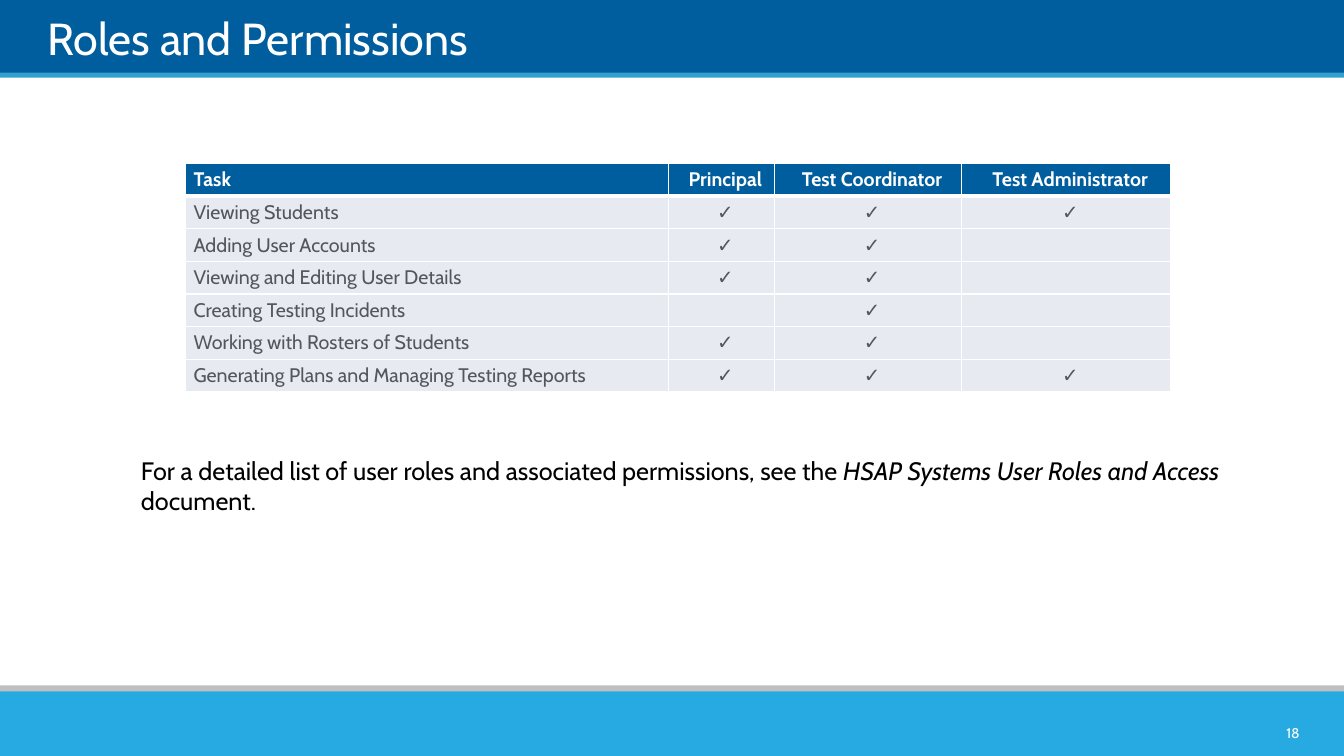
from pptx import Presentation
from pptx.dml.color import RGBColor
from pptx.enum.shapes import MSO_SHAPE
from pptx.enum.text import MSO_ANCHOR, PP_ALIGN
from pptx.oxml import parse_xml
from pptx.oxml.ns import nsdecls
from pptx.util import Inches, Pt

RECTANGLE = MSO_SHAPE.RECTANGLE
MIDDLE, BOTTOM = MSO_ANCHOR.MIDDLE, MSO_ANCHOR.BOTTOM
LEFT, CENTER, RIGHT = PP_ALIGN.LEFT, PP_ALIGN.CENTER, PP_ALIGN.RIGHT

FONT = "Cabin"
COLORS = {
    "navy": "005E9E", "blue": "35A0CE", "gray": "BFBFBF", "sky": "27AAE1",
    "cell": "E7EAF0", "task": "53565A", "white": "FFFFFF", "black": "000000",
}
TITLE = "Roles and Permissions"
PAGE_NUMBER = "18"
ROLES = ["Principal", "Test Coordinator", "Test Administrator"]
PERMISSIONS = [
    ("Viewing Students", ROLES),
    ("Adding User Accounts", ROLES[:2]),
    ("Viewing and Editing User Details", ROLES[:2]),
    ("Creating Testing Incidents", ROLES[1:2]),
    ("Working with Rosters of Students", ROLES[:2]),
    ("Generating Plans and Managing Testing Reports", ROLES),
]
NOTE = [
    ("For a detailed list of user roles and associated permissions, see the ", False),
    ("HSAP Systems User Roles and Access", True),
    (" document.", False),
]
BANDS = [
    (-0.01, 0.75, "navy"),
    (0.72, 0.05, "blue"),
    (6.8, 0.14, "gray"),
    (6.86, 0.64, "sky"),
]
COLUMN_WIDTHS = [4.79, 1.05, 1.86, 2.07]
TABLE_LEFT, TABLE_TOP, TABLE_HEIGHT = 1.84, 1.62, 2.27


def rgb(name):
    return RGBColor.from_string(COLORS[name])


def style(font, size, color, bold=False, italic=False):
    font.name = FONT
    font.size = Pt(size)
    font.bold = bold
    font.italic = italic
    font.color.rgb = rgb(color)


def add_border(cell, side, points):
    cell._tc.get_or_add_tcPr().append(parse_xml(
        f'<a:ln{side} {nsdecls("a")} w="{Pt(points)}"><a:solidFill>'
        f'<a:srgbClr val="{COLORS["white"]}"/></a:solidFill></a:ln{side}>'))


def add_bands(slide, width):
    for top, height, color in BANDS:
        band = slide.shapes.add_shape(RECTANGLE, 0, Inches(top), width, Inches(height))
        band.shadow.inherit = False
        band.fill.solid()
        band.fill.fore_color.rgb = rgb(color)
        band.line.fill.background()


def add_title(slide):
    title = slide.shapes.title
    title.element.getparent().append(title.element)
    title.left, title.top = Inches(0.47), Inches(0.07)
    title.width, title.height = Inches(12.05), Inches(0.57)
    frame = title.text_frame
    frame.text = TITLE
    frame.vertical_anchor = BOTTOM
    frame.margin_left = frame.margin_right = frame.margin_top = frame.margin_bottom = 0
    frame.paragraphs[0].alignment = LEFT
    style(frame.paragraphs[0].runs[0].font, 32, "white")


def add_page_number(slide):
    number = slide.shapes.add_textbox(Inches(12.36), Inches(7.12), Inches(0.63), Inches(0.31))
    frame = number.text_frame
    frame.word_wrap = True
    frame.vertical_anchor = MIDDLE
    frame.text = PAGE_NUMBER
    frame.paragraphs[0].alignment = RIGHT
    style(frame.paragraphs[0].runs[0].font, 10, "white")


def add_permissions(slide):
    rows = [["Task", *ROLES]]
    for task, allowed in PERMISSIONS:
        rows.append([task, *("✓" if role in allowed else "" for role in ROLES)])
    table = slide.shapes.add_table(
        len(rows), len(COLUMN_WIDTHS), Inches(TABLE_LEFT), Inches(TABLE_TOP),
        Inches(sum(COLUMN_WIDTHS)), Inches(TABLE_HEIGHT)).table
    for column, width in zip(table.columns, COLUMN_WIDTHS):
        column.width = Inches(width)
    for r, row in enumerate(rows):
        header = r == 0
        table.rows[r].height = Inches(TABLE_HEIGHT / len(rows))
        for c, text in enumerate(row):
            cell = table.cell(r, c)
            for side in "LRTB":
                heavy = (header and side == "B") or (r == 1 and side == "T")
                add_border(cell, side, 3 if heavy else 1)
            cell.fill.solid()
            cell.fill.fore_color.rgb = rgb("navy" if header else "cell")
            cell.vertical_anchor = MIDDLE
            cell.margin_left = cell.margin_right = Inches(0)
            cell.margin_top = cell.margin_bottom = Inches(0)
            cell.text = text
            paragraph = cell.text_frame.paragraphs[0]
            paragraph.alignment = CENTER if c else LEFT
            paragraph._p.get_or_add_pPr().set("marL", str(Inches(0.08)))
            for run in paragraph.runs:
                style(run.font, 14, "white" if header else "task", bold=header)


def add_note(slide):
    note = slide.shapes.add_textbox(Inches(1.3), Inches(4.47), Inches(11.16), Inches(0.91))
    note.text_frame.word_wrap = True
    paragraph = note.text_frame.paragraphs[0]
    for text, italic in NOTE:
        run = paragraph.add_run()
        run.text = text
        style(run.font, 18, "black", italic=italic)


def main():
    deck = Presentation()
    deck.slide_width, deck.slide_height = Inches(13.33), Inches(7.5)
    slide = deck.slides.add_slide(deck.slide_layouts[5])
    add_bands(slide, deck.slide_width)
    add_title(slide)
    add_page_number(slide)
    add_permissions(slide)
    add_note(slide)
    deck.save("out.pptx")


if __name__ == "__main__":
    main()
